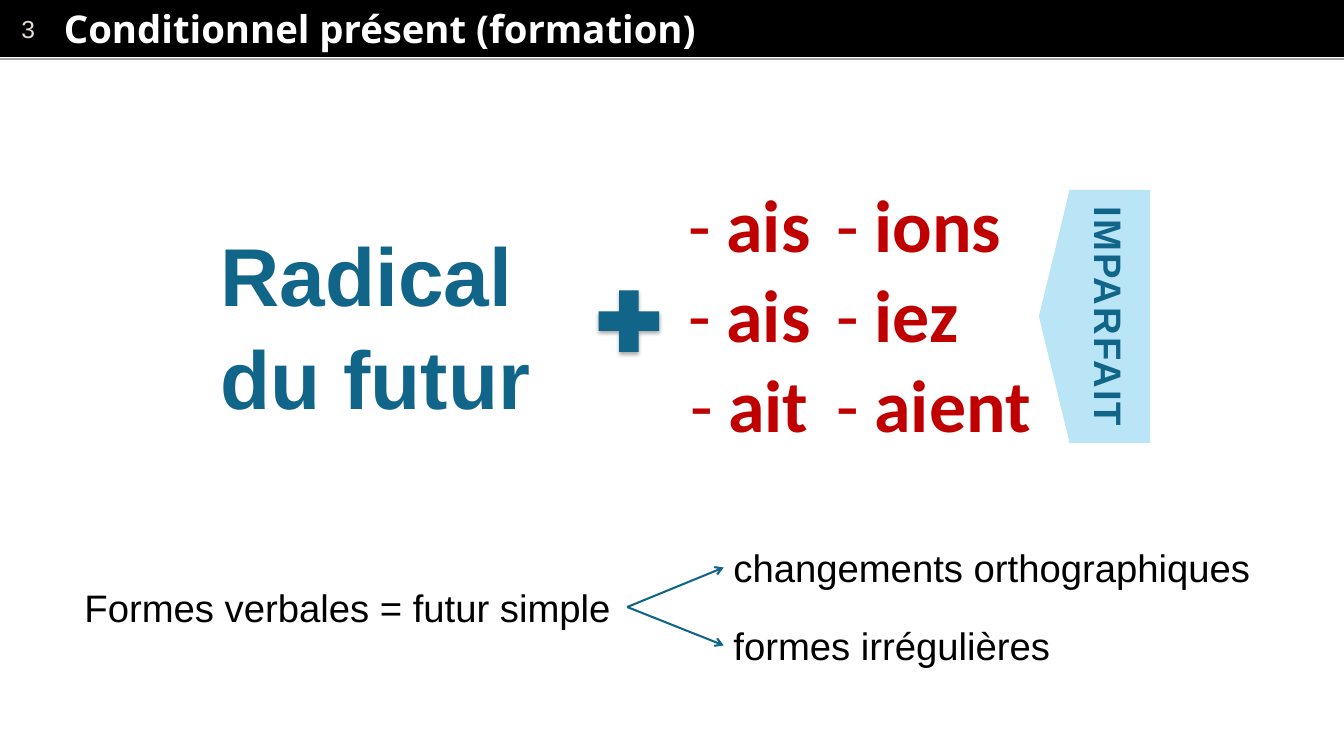
"""Build a French grammar slide on forming the present conditional."""
from typing import NamedTuple

from lxml.etree import SubElement
from pptx import Presentation
from pptx.dml.color import RGBColor
from pptx.enum.shapes import MSO_CONNECTOR as Connector, MSO_SHAPE as Shape
from pptx.enum.text import MSO_ANCHOR as Anchor, MSO_AUTO_SIZE as AutoSize, PP_ALIGN as Align
from pptx.oxml.ns import qn
from pptx.util import Cm, Pt

COLORS = {"bar": "000000", "rule": "A6A6A6", "number": "E7DED1", "title": "FFFFFF",
          "teal": "106588", "ending": "C00000", "callout": "B9E5F7", "text": "000000"}
WIDTH, HEIGHT = 34.67, 19.51
NOTE_HEIGHT = 1.45


class Area(NamedTuple):
    """Left, top, width and height in centimetres."""
    left: float
    top: float
    width: float
    height: float

    def lengths(self) -> list:
        """Return the four sides as lengths."""
        return [Cm(side) for side in self]

    def middle(self) -> float:
        """Return the height of the horizontal centre line."""
        return self.top + self.height / 2


class Note(NamedTuple):
    """One line of plain text and its place."""
    text: str
    area: Area


class Endings(NamedTuple):
    """One column of verb endings."""
    words: tuple
    width: float
    align: Align


SOURCE = Note("Formes verbales = futur simple", Area(1.93, 14.94, 14.25, NOTE_HEIGHT))
BRANCHES = (
    Note("changements orthographiques", Area(18.67, 13.92, 14.3, NOTE_HEIGHT)),
    Note("formes irrégulières", Area(18.67, 15.93, 8.79, NOTE_HEIGHT)),
)
ENDINGS = (
    Endings(("ais", "ais", "ait"), 4.14, Align.CENTER),
    Endings(("ions", "iez", "aient"), 5.59, Align.LEFT),
)


def color(name: str) -> RGBColor:
    """Look up a named colour."""
    return RGBColor.from_string(COLORS[name])


def write(frame, lines, *, size: float, ink: str, font: str = "Arial", bold: bool = False,
          align: Align = Align.LEFT, anchor: Anchor = Anchor.TOP, wrap: bool = True,
          grow: bool = False, margins: tuple = (0.25, 0.13), spacing: float = 1.0) -> list:
    """Fill a text frame with formatted lines and return its paragraphs."""
    frame.word_wrap = wrap
    frame.auto_size = AutoSize.SHAPE_TO_FIT_TEXT if grow else AutoSize.NONE
    frame.vertical_anchor = anchor
    frame.margin_left = frame.margin_right = Cm(margins[0])
    frame.margin_top = frame.margin_bottom = Cm(margins[1])
    for index, line in enumerate(lines):
        para = frame.paragraphs[0] if index == 0 else frame.add_paragraph()
        para.alignment, para.line_spacing = align, spacing
        span = para.add_run()
        span.text = line
        span.font.name, span.font.size, span.font.bold = font, Pt(size), bold
        span.font.color.rgb = color(ink)
    return list(frame.paragraphs)


def add_box(page, area: Area, lines, **format):
    """Add a text box."""
    box = page.shapes.add_textbox(*area.lengths())
    write(box.text_frame, lines, **format)
    return box


def add_filled(page, kind: Shape, area: Area, fill: str):
    """Add a flat shape without an outline."""
    shape = page.shapes.add_shape(kind, *area.lengths())
    shape.shadow.inherit = False
    shape.fill.solid()
    shape.fill.fore_color.rgb = color(fill)
    shape.line.fill.background()
    return shape


def add_line(page, start: tuple, end: tuple, ink: str, weight: float, arrow: bool = False):
    """Add a straight line, with an arrowhead at its end if asked."""
    points = [Cm(value) for value in (*start, *end)]
    line = page.shapes.add_connector(Connector.STRAIGHT, *points)
    line.line.color.rgb = color(ink)
    line.line.width = Pt(weight)
    if arrow:
        SubElement(line.line._get_or_add_ln(), qn("a:tailEnd"), type="arrow")
    SubElement(line._element.spPr, qn("a:effectLst"))


def add_soft_shadow(shape):
    """Give a shape a faint shadow below it."""
    effects = shape._element.spPr.find(qn("a:effectLst"))
    shadow = SubElement(effects, qn("a:outerShdw"), blurRad=str(Pt(3.1)), dist=str(Pt(1.8)),
                        dir="5400000", rotWithShape="0")
    shade = SubElement(shadow, qn("a:srgbClr"), val="000000")
    SubElement(shade, qn("a:alpha"), val="35000")


def add_dash(para):
    """Put a hanging dash before a paragraph."""
    indent = Cm(0.97)
    props = para._p.get_or_add_pPr()
    props.set("marL", str(indent))
    props.set("indent", str(-indent))
    SubElement(props, qn("a:buFont"), typeface="Calibri")
    SubElement(props, qn("a:buChar"), char="-")
    tabs = SubElement(props, qn("a:tabLst"))
    SubElement(tabs, qn("a:tab"), pos=str(Cm(1.27)), algn="l")


def add_header(page):
    """Draw the title bar with the page number."""
    bar = add_filled(page, Shape.RECTANGLE, Area(0, 0, WIDTH, 1.47), "bar")
    para, = write(bar.text_frame, ["3"], size=18, ink="number", anchor=Anchor.MIDDLE)
    para._p.get_or_add_pPr().set("marL", str(Cm(0.3)))
    add_line(page, (0, 1.52), (WIDTH, 1.52), "rule", 2)
    add_box(page, Area(1.55, 0.03, 32.64, 1.42), ["Conditionnel présent (formation)"], size=28,
            ink="title", font="Open Sans", bold=True, anchor=Anchor.MIDDLE, margins=(0.1, 0.1))


def add_endings(page):
    """Draw the table of endings."""
    area = Area(17.27, 4.7, sum(column.width for column in ENDINGS), 6.1)
    table = page.shapes.add_table(1, len(ENDINGS), *area.lengths()).table
    table.first_row = table.horz_banding = False
    for index, column in enumerate(ENDINGS):
        table.columns[index].width = Cm(column.width)
        cell = table.cell(0, index)
        cell.fill.background()
        cell.vertical_anchor = Anchor.MIDDLE
        cell.margin_left = cell.margin_right = Cm(0.18)
        cell.margin_top = cell.margin_bottom = 0
        for para in write(cell.text_frame, column.words, size=54, ink="ending", font="Calibri",
                          bold=True, align=column.align):
            add_dash(para)


def add_formula(page):
    """Draw the stem, the plus sign, the endings and their tense."""
    add_box(page, Area(5.44, 5.54, 11.05, 5.38), ["Radical", "du futur"], size=60, ink="teal",
            bold=True, grow=True, spacing=1.05)
    add_soft_shadow(add_filled(page, Shape.MATH_PLUS, Area(15.16, 7.21, 2.13, 2.16), "teal"))
    add_endings(page)
    callout = add_filled(page, Shape.LEFT_ARROW_CALLOUT, Area(26.8, 4.9, 2.87, 6.53), "callout")
    for index, value in enumerate((0.23, 1.11, 0.27, 0.76)):
        callout.adjustments[index] = value
    para, = write(callout.text_frame, ["IMPARFAIT"], size=28, ink="teal", bold=True,
                  align=Align.CENTER, anchor=Anchor.MIDDLE)
    callout.text_frame._txBody.bodyPr.set("vert", "vert")
    para.runs[0].font._element.set("spc", "150")


def add_notes_tree(page):
    """Draw the remark on verb forms and its two branches."""
    for note in (SOURCE, *BRANCHES):
        add_box(page, note.area, [note.text], size=28, ink="text", wrap=False, grow=True)
    start = (SOURCE.area.left + SOURCE.area.width, SOURCE.area.middle())
    for note in BRANCHES:
        add_line(page, start, (note.area.left, note.area.middle()), "teal", 1.5, arrow=True)


def main():
    """Build and save the deck."""
    deck = Presentation()
    deck.slide_width, deck.slide_height = Cm(WIDTH), Cm(HEIGHT)
    page = deck.slides.add_slide(deck.slide_layouts[6])
    add_header(page)
    add_formula(page)
    add_notes_tree(page)
    deck.save("out.pptx")


if __name__ == "__main__":
    main()
